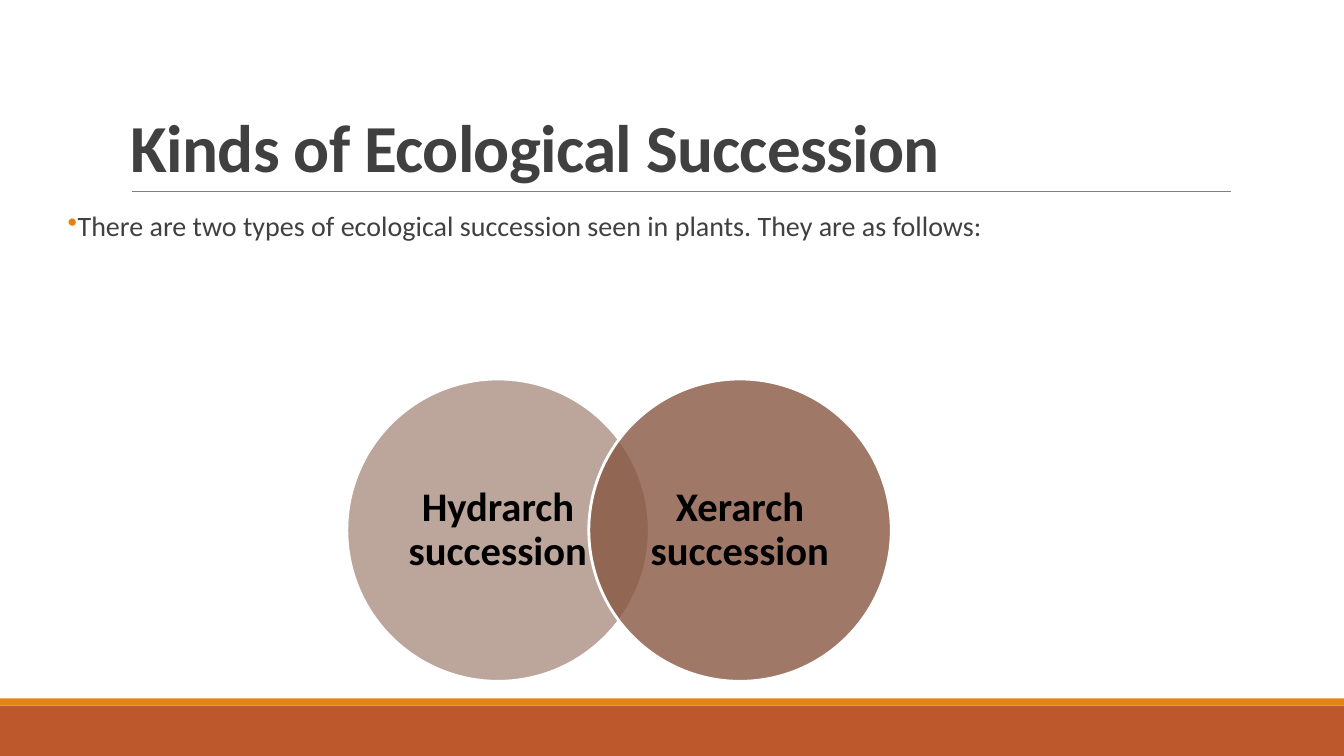
import pptx
import pptx.util
import pptx.dml.color
import pptx.enum.shapes
import pptx.enum.text
import pptx.oxml
import pptx.oxml.ns
from lxml import etree

Inches, Pt = pptx.util.Inches, pptx.util.Pt
RGB = pptx.dml.color.RGBColor.from_string
SHAPE = pptx.enum.shapes.MSO_SHAPE
ALIGN = pptx.enum.text.PP_ALIGN
ANCHOR = pptx.enum.text.MSO_ANCHOR
qn = pptx.oxml.ns.qn

# Content
TITLE = "Kinds of Ecological Succession"
INTRO = "There are two types of ecological succession seen in plants. They are as follows:"
KINDS = [("Hydrarch succession", "7A4E3A", 50), ("Xerarch succession", "875741", 80)]

THEME = {
    "font": "Calibri", "text": "404040", "label": "000000", "rule": "808080",
    "accent": "E48312", "footer": "BD582C", "outline": "FFFFFF",
    "title_size": 48, "intro_size": 20, "label_size": 29,
}

# Geometry, in inches
PAGE_W, PAGE_H = 13.33, 7.5
FOOTER_H, STRIPE_H = 0.5, 0.07
CIRCLE_LEFT, CIRCLE_TOP, CIRCLE_SIZE, CIRCLE_STEP = 3.44, 3.76, 3, 2.4
LABEL_INSET = 0.44

deck = pptx.Presentation()
deck.slide_width, deck.slide_height = Inches(PAGE_W), Inches(PAGE_H)
page = deck.slides.add_slide(deck.slide_layouts[6])


def add_text(text, at, *, size, color, bold=False, align=ALIGN.LEFT, anchor=ANCHOR.TOP,
             insets=(0.1, 0.05), line=0.9, before=0, after=0, tracking=None, bullet=None):
    box = page.shapes.add_textbox(*map(Inches, at))
    frame = box.text_frame
    frame.word_wrap, frame.vertical_anchor = True, anchor
    frame.margin_left = frame.margin_right = Inches(insets[0])
    frame.margin_top = frame.margin_bottom = Inches(insets[1])
    para = frame.paragraphs[0]
    para.alignment, para.line_spacing = align, line
    para.space_before, para.space_after = Pt(before), Pt(after)
    span = para.add_run()
    span.text = text
    span.font.name, span.font.size, span.font.bold = THEME["font"], Pt(size), bold
    span.font.color.rgb = RGB(color)
    if tracking is not None:
        span.font._element.set("spc", str(int(tracking * 100)))
    if bullet:
        props = para._p.get_or_add_pPr()
        props.set("marL", str(Inches(0.1)))
        props.set("indent", str(-Inches(0.1)))
        tint = etree.SubElement(props, qn("a:buClr"))
        etree.SubElement(tint, qn("a:srgbClr"), val=bullet)
        etree.SubElement(props, qn("a:buChar"), char="•")
    return box


def add_filled(kind, at, fill, outline=None, opacity=100):
    shape = page.shapes.add_shape(kind, *map(Inches, at))
    shape.shadow.inherit = False
    shape.fill.solid()
    shape.fill.fore_color.rgb = RGB(fill)
    if opacity < 100:
        color = shape._element.spPr.find(qn("a:solidFill"))[0]
        etree.SubElement(color, qn("a:alpha"), val=str(opacity * 1000))
    if outline:
        shape.line.color.rgb, shape.line.width = RGB(outline), Pt(2)
    else:
        shape.line.fill.background()
    return shape


# Footer band and stripe
footer_top = PAGE_H - FOOTER_H
add_filled(SHAPE.RECTANGLE, (0, footer_top, PAGE_W, FOOTER_H), THEME["footer"])
add_filled(SHAPE.RECTANGLE, (0, footer_top - STRIPE_H, PAGE_W, STRIPE_H), THEME["accent"])

# Rule under the title
rule = page.shapes.add_connector(pptx.enum.shapes.MSO_CONNECTOR.STRAIGHT,
                                 Inches(1.31), Inches(1.9), Inches(12.21), Inches(1.9))
rule.line.color.rgb, rule.line.width = RGB(THEME["rule"]), Pt(0.5)
etree.SubElement(rule._element.spPr, qn("a:effectLst"))

# Title and introduction
add_text(TITLE, (1.2, 0.31, 11, 1.59), size=THEME["title_size"], color=THEME["text"],
         bold=True, anchor=ANCHOR.BOTTOM, line=0.85, tracking=-0.5)
add_text(INTRO, (0.67, 2.06, 12, 4.21), size=THEME["intro_size"], color=THEME["text"],
         align=ALIGN.JUSTIFY, insets=(0, 0.05), before=12, after=2, bullet=THEME["accent"])

# Overlapping circles with their labels
label_size = CIRCLE_SIZE - 2 * LABEL_INSET
for index, (name, fill, opacity) in enumerate(KINDS):
    left = CIRCLE_LEFT + index * CIRCLE_STEP
    add_filled(SHAPE.OVAL, (left, CIRCLE_TOP, CIRCLE_SIZE, CIRCLE_SIZE), fill,
               THEME["outline"], opacity)
    add_text(name, (left + LABEL_INSET, CIRCLE_TOP + LABEL_INSET, label_size, label_size),
             size=THEME["label_size"], color=THEME["label"], bold=True, align=ALIGN.CENTER,
             anchor=ANCHOR.MIDDLE, insets=(0.15, 0.04))

deck.save("out.pptx")
